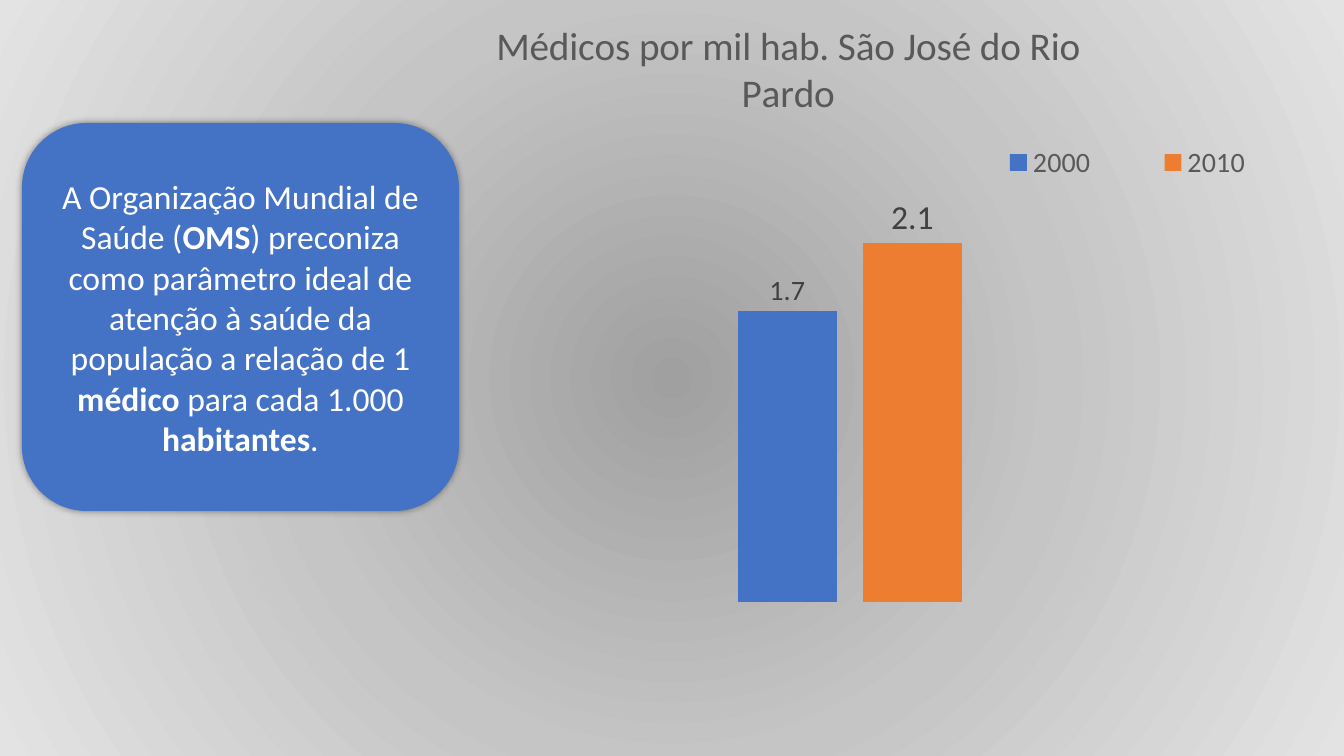
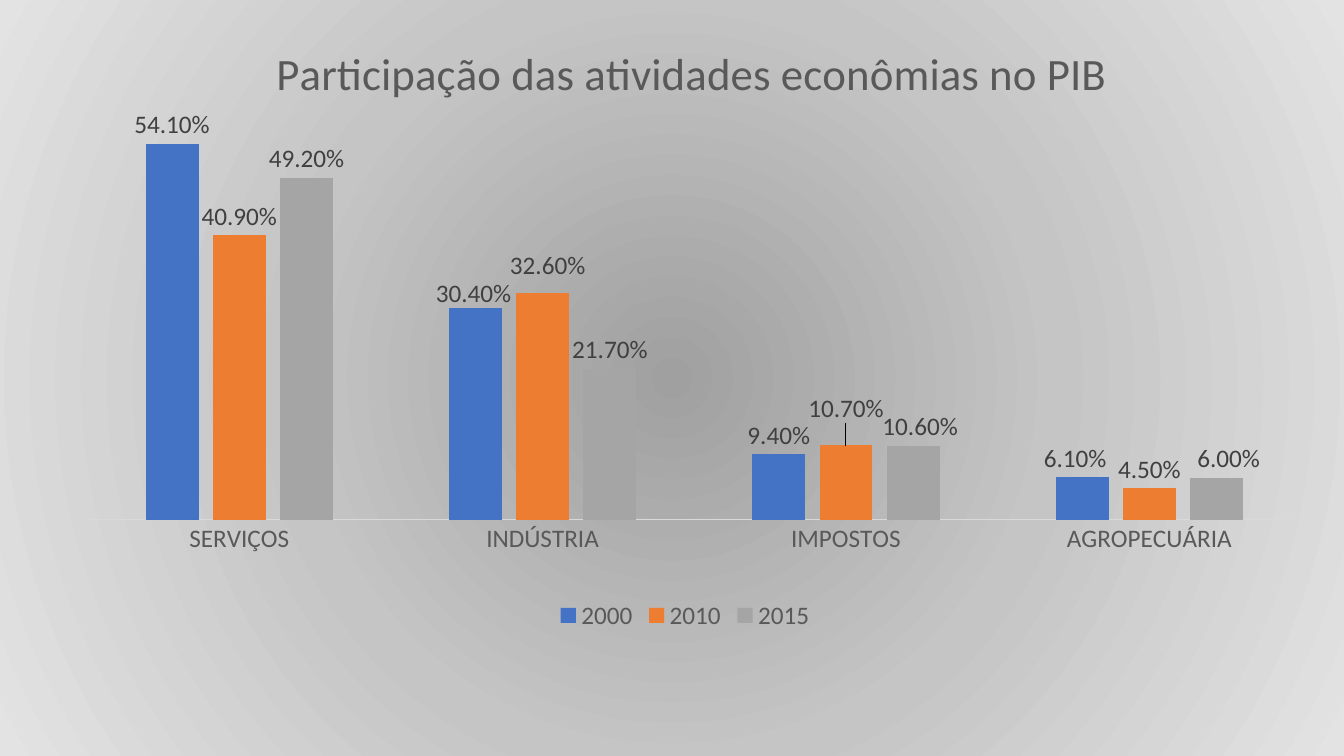
from lxml.etree import SubElement
from pptx import Presentation
from pptx.chart.data import CategoryChartData
from pptx.dml.color import RGBColor
from pptx.enum.chart import (XL_CHART_TYPE, XL_LABEL_POSITION,
                             XL_LEGEND_POSITION, XL_TICK_MARK)
from pptx.enum.shapes import MSO_SHAPE
from pptx.enum.text import MSO_ANCHOR, PP_ALIGN
from pptx.oxml import parse_xml
from pptx.oxml.ns import nsdecls, qn
from pptx.util import Emu, Pt

PAGE_WIDTH, PAGE_HEIGHT = 1344, 756
EMU_PER_PX = 12192000 / PAGE_WIDTH
FONT = "Calibri"
BLUE, ORANGE, GREY = "4472C4", "ED7D31", "A5A5A5"
WHITE, BLACK = "FFFFFF", "000000"
TITLE_COLOR, LABEL_COLOR, AXIS_COLOR = "595959", "404040", "D9D9D9"
BACKDROP_STOPS = [(0, "A0A0A0"), (50, "C5C5C5"), (100, "E3E3E3")]


def px(length):
    return Emu(round(length * EMU_PER_PX))


def color(value):
    return RGBColor.from_string(value)


def style_font(font, size, value, bold=False):
    font.name = FONT
    font.size = Pt(size)
    font.bold = bold
    font.color.rgb = color(value)


def add_panel(page, kind, left, top, width, height):
    panel = page.shapes.add_shape(kind, px(left), px(top), px(width), px(height))
    panel.shadow.inherit = False
    panel.line.fill.background()
    return panel


def add_backdrop(page):
    panel = add_panel(page, MSO_SHAPE.RECTANGLE, 0, 0, PAGE_WIDTH, PAGE_HEIGHT)
    panel.fill.gradient()
    gradient = panel._element.spPr.find(qn("a:gradFill"))
    stops = "".join(
        f'<a:gs pos="{position * 1000}"><a:srgbClr val="{value}"/></a:gs>'
        for position, value in BACKDROP_STOPS)
    radial = parse_xml(
        f'<a:gradFill {nsdecls("a")} rotWithShape="1"><a:gsLst>{stops}</a:gsLst>'
        '<a:path path="circle"><a:fillToRect l="50000" t="50000" r="50000" '
        'b="50000"/></a:path></a:gradFill>')
    gradient.getparent().replace(gradient, radial)


def add_glow_shadow(panel, blur, opacity):
    effects = panel._element.spPr.find(qn("a:effectLst"))
    shadow = SubElement(effects, qn("a:outerShdw"), blurRad=str(Pt(blur)),
                        dist="0", dir="0", algn="ctr", rotWithShape="0")
    tint = SubElement(shadow, qn("a:srgbClr"), val=BLACK)
    SubElement(tint, qn("a:alpha"), val=str(opacity * 1000))


def add_callout(page, left, top, width, height, spans):
    panel = add_panel(page, MSO_SHAPE.ROUNDED_RECTANGLE, left, top, width, height)
    panel.fill.solid()
    panel.fill.fore_color.rgb = color(BLUE)
    add_glow_shadow(panel, 5, 40)
    frame = panel.text_frame
    frame.word_wrap = True
    frame.vertical_anchor = MSO_ANCHOR.MIDDLE
    para = frame.paragraphs[0]
    para.alignment = PP_ALIGN.CENTER
    for text, bold in spans:
        span = para.add_run()
        span.text = text
        style_font(span.font, 24, WHITE, bold)


def set_layout(element, index, target=None, mode="edge", **lengths):
    current = element.find(qn("c:layout"))
    if current is not None:
        element.remove(current)
    layout = parse_xml(f'<c:layout {nsdecls("c")}><c:manualLayout/></c:layout>')
    manual = layout[0]
    if target:
        SubElement(manual, qn("c:layoutTarget"), val=target)
    if mode == "edge":
        for axis in "xy":
            SubElement(manual, qn(f"c:{axis}Mode"), val=mode)
    for name, value in lengths.items():
        SubElement(manual, qn(f"c:{name}"), val=str(value))
    element.insert(index, layout)


def set_title(chart, text, size, position):
    chart.has_title = True
    title = chart.chart_title
    title.include_in_layout = False
    span = title.text_frame.paragraphs[0].add_run()
    span.text = text
    style_font(span.font, size, TITLE_COLOR)
    set_layout(title._element, 1, **position)


def set_legend(chart, size, position):
    chart.has_legend = True
    legend = chart.legend
    legend.position = XL_LEGEND_POSITION.BOTTOM
    legend.include_in_layout = False
    style_font(legend.font, size, TITLE_COLOR)
    set_layout(legend._element, 1, **position)


def set_axes(chart, maximum, show_categories):
    values = chart.value_axis
    values.minimum_scale = 0
    values.maximum_scale = maximum
    values.has_major_gridlines = False
    values.visible = False
    categories = chart.category_axis
    categories.visible = show_categories
    if show_categories:
        categories.major_tick_mark = XL_TICK_MARK.NONE
        categories.format.line.color.rgb = color(AXIS_COLOR)
        categories.format.line.width = Pt(0.75)
        style_font(categories.tick_labels.font, 18, TITLE_COLOR)


def style_series(series, fill, size, number_format):
    series.format.fill.solid()
    series.format.fill.fore_color.rgb = color(fill)
    series.invert_if_negative = False
    labels = series.data_labels
    labels.show_value = True
    labels.number_format = number_format
    labels.number_format_is_linked = False
    labels.position = XL_LABEL_POSITION.OUTSIDE_END
    style_font(labels.font, size, LABEL_COLOR)


def move_label(series, point, size, shift_x, shift_y):
    label = series.points[point].data_label
    label.position = XL_LABEL_POSITION.OUTSIDE_END
    style_font(label.font, size, LABEL_COLOR)
    set_layout(label._get_or_add_dLbl(), 1, mode="factor", x=shift_x, y=shift_y)


def add_columns(page, frame, categories, series_rows, number_format, maximum,
                plot_area, show_categories=False):
    data = CategoryChartData(number_format=number_format)
    data.categories = categories
    for name, values, _, _ in series_rows:
        data.add_series(name, values)
    chart = page.shapes.add_chart(XL_CHART_TYPE.COLUMN_CLUSTERED,
                                  *map(px, frame), data).chart
    style_font(chart.font, 10, BLACK)
    plot = chart.plots[0]
    plot.gap_width = 219
    plot.overlap = -27
    plot.vary_by_categories = False
    for series, (_, _, fill, size) in zip(plot.series, series_rows):
        style_series(series, fill, size, number_format)
    set_axes(chart, maximum, show_categories)
    set_layout(chart._chartSpace.chart.plotArea, 0, "inner",
               **dict(zip("xywh", plot_area)))
    return chart


def build_doctors(page):
    add_callout(page, 22, 123, 437, 388, [
        ("A Organização Mundial de Saúde (", False),
        ("OMS", True),
        (") preconiza como parâmetro ideal de atenção à saúde da população "
         "a relação de 1 ", False),
        ("médico", True),
        (" para cada 1.000 ", False),
        ("habitantes", True),
        (".", False),
    ])
    chart = add_columns(
        page, (481, 0, 829, 602), ["1"],
        [("2000", [1.7], BLUE, 20), ("2010", [2.1], ORANGE, 24)],
        "0.0", 2.5, (0.18, 0.29, 0.53, 0.71))
    set_title(chart, "Médicos por mil hab. São José do Rio Pardo", 28,
              {"x": 0.01, "y": 0.02})
    set_legend(chart, 20, {"x": 0.56, "y": 0.23, "w": 0.44, "h": 0.08})


def build_activities(page):
    width, height = 1291, 684
    chart = add_columns(
        page, (36, 0, width, height),
        ["SERVIÇOS", "INDÚSTRIA", "IMPOSTOS", "AGROPECUÁRIA"],
        [("2000", [0.541, 0.304, 0.094, 0.061], BLUE, 18),
         ("2010", [0.409, 0.326, 0.107, 0.045], ORANGE, 18),
         ("2015", [0.492, 0.217, 0.106, 0.06], GREY, 18)],
        "0.00%", 0.6, (0.04, 0.15, 0.94, 0.61), show_categories=True)
    set_title(chart, "Participação das atividades econômias no PIB", 32,
              {"x": 0.18, "y": 0.05})
    set_legend(chart, 18, {"x": 0.4, "y": 0.87})
    label_shifts = [(0, 1, -2, 4), (0, 3, -7, 0), (1, 1, 5, -8),
                    (1, 2, 0, -18), (2, 2, 7, 0), (2, 3, 12, 0)]
    for row, point, right, down in label_shifts:
        move_label(chart.plots[0].series[row], point, 18,
                   round(right / width, 4), round(down / height, 4))


def main():
    deck = Presentation()
    deck.slide_width, deck.slide_height = px(PAGE_WIDTH), px(PAGE_HEIGHT)
    for build in (build_doctors, build_activities):
        page = deck.slides.add_slide(deck.slide_layouts[6])
        add_backdrop(page)
        build(page)
    deck.save("out.pptx")


if __name__ == "__main__":
    main()
